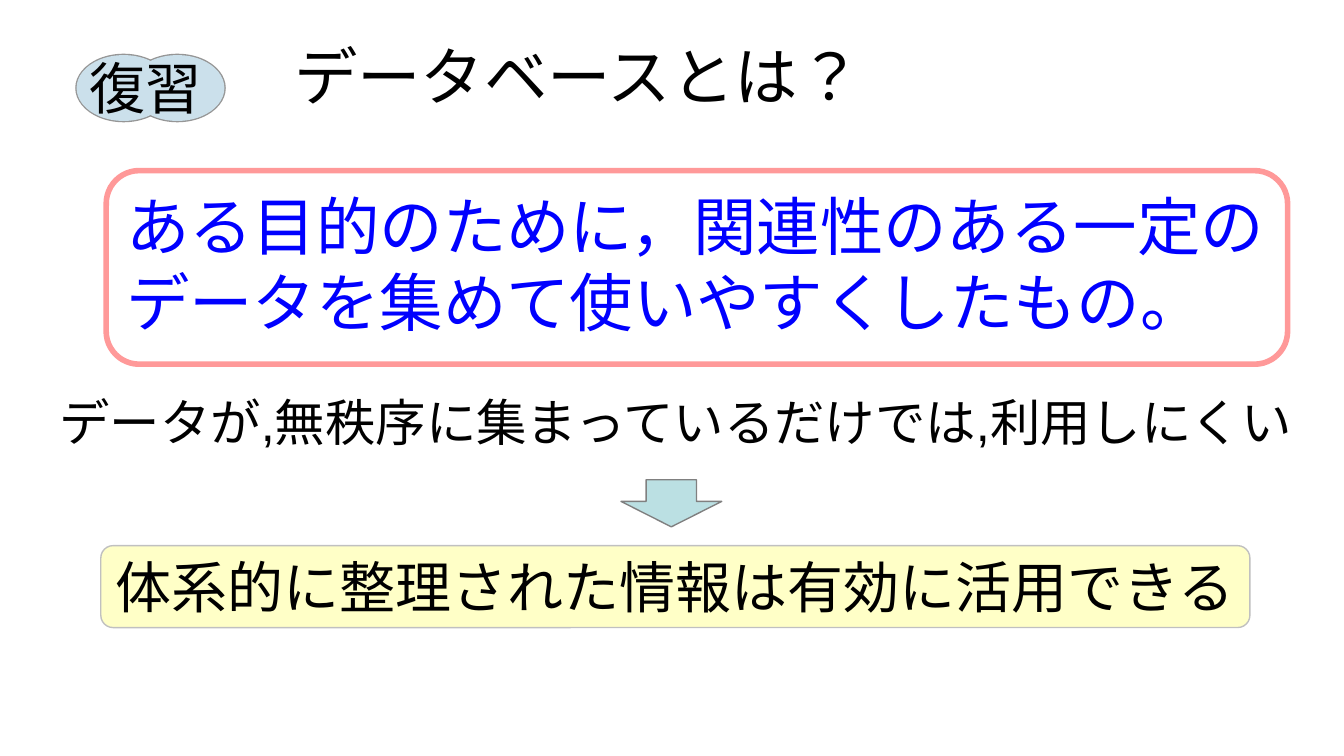
from pptx import Presentation
from pptx.dml.color import RGBColor
from pptx.enum.lang import MSO_LANGUAGE_ID
from pptx.enum.shapes import MSO_SHAPE
from pptx.enum.text import MSO_ANCHOR, PP_ALIGN
from pptx.util import Inches, Pt

ELLIPSE = MSO_SHAPE.OVAL
ROUNDED = MSO_SHAPE.ROUNDED_RECTANGLE
DOWN_ARROW = MSO_SHAPE.DOWN_ARROW
TOP = MSO_ANCHOR.TOP
LEFT, CENTER = PP_ALIGN.LEFT, PP_ALIGN.CENTER
JAPANESE = MSO_LANGUAGE_ID.JAPANESE
FONT = "Arial"

COLORS = {
    "text": "000000", "definition": "0000FF", "frame": "FF9999",
    "badge": "CBE0EB", "badge_edge": "969696",
    "conclusion": "FFFFC7", "conclusion_edge": "C0C0C0",
    "arrow": "BBE0E3", "arrow_edge": "808080",
}

# Content: text, box (left, top, width, height), format
TEXTS = [
    ("データベースとは？", (2.09, 0.23, 5.21, 0.67), dict(size=34)),
    ("復習", (0.57, 0.35, 1.3, 0.6), dict(size=30)),
    ("ある目的のために，関連性のある一定のデータを集めて使いやすくしたもの。",
     (0.84, 1.34, 8.75, 1.24), dict(size=34, color="definition")),
    ("データが,無秩序に集まっているだけでは,利用しにくい",
     (-0.05, 2.86, 10.15, 0.59), dict(size=27, align=CENTER)),
    ("体系的に整理された情報は有効に活用できる",
     (0.75, 4.06, 8.55, 0.6), dict(size=30, align=CENTER)),
]

# Shapes: kind, box, format
SHAPES = [
    (ROUNDED, (0.79, 1.27, 8.79, 1.44),
     dict(line="frame", line_width=3, adjustments=[0.17])),
    (ROUNDED, (0.75, 4.06, 8.55, 0.61),
     dict(fill="conclusion", line="conclusion_edge", adjustments=[0.15])),
    (DOWN_ARROW, (4.62, 3.57, 0.75, 0.35),
     dict(fill="arrow", line="arrow_edge", adjustments=[0.5, 0.54])),
]

# Badge: two overlapping ellipses, the edge colour showing behind the fill
BADGE_LEFTS = (0.96, 0.56)
BADGE_TOP, BADGE_WIDTH, BADGE_HEIGHT = 0.4, 0.72, 0.51
BADGE_LAYERS = [("badge_edge", 0), ("badge", 0.01)]


def color_of(name):
    return RGBColor.from_string(COLORS[name])


def add_shape(slide, kind, box, fill=None, line=None, line_width=0.75, adjustments=()):
    shape = slide.shapes.add_shape(kind, *map(Inches, box))
    shape.shadow.inherit = False
    if fill:
        shape.fill.solid()
        shape.fill.fore_color.rgb = color_of(fill)
    else:
        shape.fill.background()
    if line:
        shape.line.color.rgb = color_of(line)
        shape.line.width = Pt(line_width)
    else:
        shape.line.fill.background()
    for index, value in enumerate(adjustments):
        shape.adjustments[index] = value


def add_text(slide, text, box, size, color="text", align=LEFT):
    frame = slide.shapes.add_textbox(*map(Inches, box)).text_frame
    frame.word_wrap = True
    frame.vertical_anchor = TOP
    paragraph = frame.paragraphs[0]
    paragraph.alignment = align
    run = paragraph.add_run()
    run.text = text
    run.font.name = FONT
    run.font.size = Pt(size)
    run.font.color.rgb = color_of(color)
    run.font.language_id = JAPANESE


def main():
    # Widescreen page, 16:9
    presentation = Presentation()
    presentation.slide_width = Inches(10)
    presentation.slide_height = Inches(10) * 9 // 16
    slide = presentation.slides.add_slide(presentation.slide_layouts[6])

    # Badge
    for fill, inset in BADGE_LAYERS:
        for left in BADGE_LEFTS:
            box = (left + inset, BADGE_TOP + inset,
                   BADGE_WIDTH - 2 * inset, BADGE_HEIGHT - 2 * inset)
            add_shape(slide, ELLIPSE, box, fill=fill)

    # Frames and arrow
    for kind, box, style in SHAPES:
        add_shape(slide, kind, box, **style)

    # Texts
    for text, box, style in TEXTS:
        add_text(slide, text, box, **style)

    presentation.save("out.pptx")


if __name__ == "__main__":
    main()
